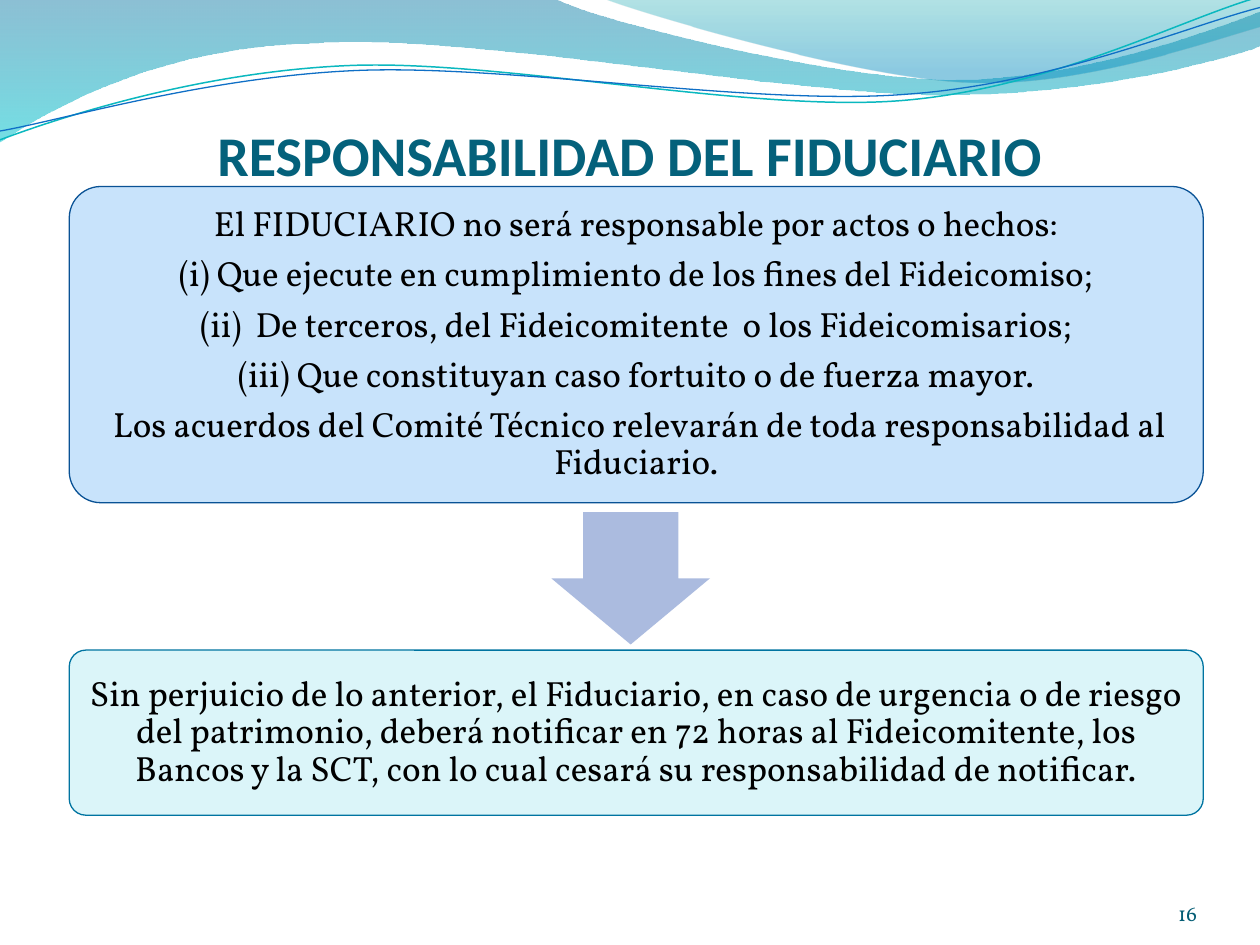
import math

from lxml import etree
from pptx import Presentation
from pptx.dml.color import RGBColor
from pptx.enum import shapes, text
from pptx.oxml.ns import qn
from pptx.util import Inches, Pt

BLACK = RGBColor(0x00, 0x00, 0x00)
TITLE_TEAL = RGBColor(0x04, 0x61, 0x7B)
NUMBER_TEAL = RGBColor(0x04, 0x5D, 0x75)
DEEP_BLUE = RGBColor(0x00, 0x74, 0xA1)
TURQUOISE = RGBColor(0x00, 0xC6, 0xCF)
TEAL = RGBColor(0x00, 0xA1, 0xA9)
SKY = RGBColor(0x00, 0x8B, 0xBF)
LINE_TEAL = RGBColor(0x0A, 0xB8, 0xBF)
LINE_BLUE = RGBColor(0x0F, 0x6F, 0xC6)
PALE_BLUE = RGBColor(0xC8, 0xE3, 0xFB)
BORDER_BLUE = RGBColor(0x09, 0x52, 0x95)
PALE_TEAL = RGBColor(0xDB, 0xF5, 0xF9)
ARROW_BLUE = RGBColor(0xAB, 0xBB, 0xDF)

BODY_FONT = "Vollkorn"
LINE_TILT = 2.7  # degrees, counter-clockwise

# Each segment is one end point (a line) or three points (a Bézier curve).
WIDE_WAVE = [
    [(0, 0)], [(4.4, -0.01)],
    [(4.76, 0.17), (6.64, 0.63), (7.58, 0.63)],
    [(8.53, 0.63), (9.58, 0.26), (10, 0.09)],
    [(10.01, 0.36)],
    [(9.83, 0.44), (8.7, 0.76), (7.46, 0.75)],
    [(6.22, 0.75), (3.82, 0.28), (2.57, 0.34)],
    [(1.29, 0.36), (0.46, 0.83), (-0.01, 1.13)],
]
RIGHT_WAVE = [
    [(4.79, -0.01)],
    [(5.09, 0.11), (6.82, 0.62), (7.69, 0.65)],
    [(8.56, 0.69), (9.61, 0.32), (10, 0.21)],
    [(10, 0)],
]
TEAL_LINE = [
    [(0, 1.11)],
    [(0.48, 0.93), (1.58, 0.57), (2.77, 0.52)],
    [(3.95, 0.47), (5.93, 0.89), (7.13, 0.8)],
    [(8.33, 0.71), (9.38, 0.15), (9.98, -0.02)],
]
BLUE_LINE = [
    [(0, 1.04)],
    [(0.47, 0.96), (1.64, 0.61), (2.83, 0.56)],
    [(4.03, 0.51), (5.97, 0.84), (7.17, 0.75)],
    [(8.36, 0.67), (9.41, 0.21), (10, 0.06)],
]

EXEMPTIONS = [
    "El FIDUCIARIO no será responsable por actos o hechos:",
    "(i) Que ejecute en cumplimiento de los fines del Fideicomiso;",
    "(ii)  De terceros, del Fideicomitente  o los Fideicomisarios;",
    "(iii) Que constituyan caso fortuito o de fuerza mayor.",
    " Los acuerdos del Comité Técnico relevarán de toda responsabilidad "
    "al Fiduciario.",
]
NOTICE = [
    "Sin perjuicio de lo anterior, el Fiduciario, en caso de urgencia o de "
    "riesgo del patrimonio, deberá notificar en 72 horas al Fideicomitente, "
    "los Bancos y la SCT, con lo cual cesará su responsabilidad de notificar.",
]


def add_curve(slide, outline, close):
    """Build a freeform, merging each three-point segment into one Bézier."""
    first, *rest = [(Inches(x), Inches(y))
                    for segment in outline for x, y in segment]
    builder = slide.shapes.build_freeform(*first)
    builder.add_line_segments(rest, close=close)
    sp = builder.convert_to_shape()
    sp.shadow.inherit = False
    nodes = iter(list(sp._element.iter(qn("a:lnTo"))))
    for segment in outline[1:]:
        head, *others = [next(nodes) for _ in segment]
        if others:
            head.tag = qn("a:cubicBezTo")
        for node in others:
            head.append(node[0])
            node.getparent().remove(node)
    return sp


def add_wave(slide, outline, stops):
    """Fill a closed outline downwards; stops are (position, colour, opacity %)."""
    sp = add_curve(slide, outline, True)
    sp.line.fill.background()
    sp.fill.gradient()
    sp.fill.gradient_angle = 270
    for stop, (position, color, _) in zip(sp.fill.gradient_stops, stops):
        stop.position = position
        stop.color.rgb = color
    colors = sp._element.spPr.iter(qn("a:srgbClr"))
    for node, (_, _, opacity) in zip(colors, stops):
        etree.SubElement(node, qn("a:alpha"), val=str(opacity * 1000))


def level(outline, center):
    """Turn the outline clockwise by LINE_TILT about the center."""
    cx, cy = center
    cos, sin = (f(math.radians(LINE_TILT)) for f in (math.cos, math.sin))
    return [[(cx + (x - cx) * cos - (y - cy) * sin,
              cy + (x - cx) * sin + (y - cy) * cos) for x, y in segment]
            for segment in outline]


def add_wave_line(slide, outline, center, color, width):
    sp = add_curve(slide, level(outline, center), False)
    sp.rotation = 360 - LINE_TILT
    sp.fill.background()
    sp.line.color.rgb = color
    sp.line.width = Pt(width)


def set_frame(tf, anchor, left, top, right, bottom):
    tf.word_wrap = True
    tf.vertical_anchor = anchor
    tf.margin_left, tf.margin_top = Inches(left), Inches(top)
    tf.margin_right, tf.margin_bottom = Inches(right), Inches(bottom)


def add_run(p, words, size, font, color, bold=False):
    r = p.add_run()
    r.text = words
    r.font.size, r.font.name, r.font.bold = Pt(size), font, bold
    r.font.color.rgb = color


def add_label(slide, box, words, align, top_margin, **style):
    sp = slide.shapes.add_textbox(*map(Inches, box))
    tf = sp.text_frame
    set_frame(tf, text.MSO_ANCHOR.BOTTOM, 0, top_margin, 0, 0)
    p = tf.paragraphs[0]
    p.alignment = align
    add_run(p, words, **style)


def add_preset(slide, kind, box, adjustments, fill):
    sp = slide.shapes.add_shape(kind, *map(Inches, box))
    sp.shadow.inherit = False
    for i, value in enumerate(adjustments):
        sp.adjustments[i] = value
    sp.fill.solid()
    sp.fill.fore_color.rgb = fill
    sp.line.fill.background()
    return sp


def add_panel(slide, top, height, fill, border, paragraphs):
    sp = add_preset(slide, shapes.MSO_SHAPE.ROUNDED_RECTANGLE,
                    (0.55, top, 9, height), [0.1], fill)
    sp.line.color.rgb = border
    sp.line.width = Pt(0.75)
    tf = sp.text_frame
    set_frame(tf, text.MSO_ANCHOR.MIDDLE, 0.08, 0.08, 0.08, 0.08)
    for i, words in enumerate(paragraphs):
        p = tf.add_paragraph() if i else tf.paragraphs[0]
        p.alignment = text.PP_ALIGN.CENTER
        p.line_spacing = 0.9
        p.space_after = Pt(7)
        add_run(p, words, 20, BODY_FONT, BLACK)


def main():
    prs = Presentation()
    prs.slide_width, prs.slide_height = Inches(10), Inches(7.5)
    slide = prs.slides.add_slide(prs.slide_layouts[6])

    add_wave(slide, WIDE_WAVE, [(0, DEEP_BLUE, 45), (1, TURQUOISE, 55)])
    add_wave(slide, RIGHT_WAVE, [(0, TEAL, 30), (0.8, SKY, 45)])
    add_wave_line(slide, TEAL_LINE, (4.99, 0.57), LINE_TEAL, 0.85)
    add_wave_line(slide, BLUE_LINE, (5, 0.59), LINE_BLUE, 0.75)

    add_label(slide, (0.5, 0.77, 9, 0.72), "RESPONSABILIDAD DEL FIDUCIARIO",
              text.PP_ALIGN.CENTER, 0.05,
              size=32, font="Calibri", color=TITLE_TEAL, bold=True)
    add_label(slide, (8.67, 6.95, 0.83, 0.4), "16", text.PP_ALIGN.RIGHT, 0,
              size=12, font=BODY_FONT, color=NUMBER_TEAL)

    add_panel(slide, 1.48, 2.51, PALE_BLUE, BORDER_BLUE, EXEMPTIONS)
    arrow = add_preset(slide, shapes.MSO_SHAPE.RIGHT_ARROW,
                       (4.48, 3.96, 1.05, 1.26), [0.6, 0.5], ARROW_BLUE)
    arrow.rotation = 90
    add_panel(slide, 5.16, 1.31, PALE_TEAL, DEEP_BLUE, NOTICE)

    prs.save("out.pptx")


if __name__ == "__main__":
    main()
